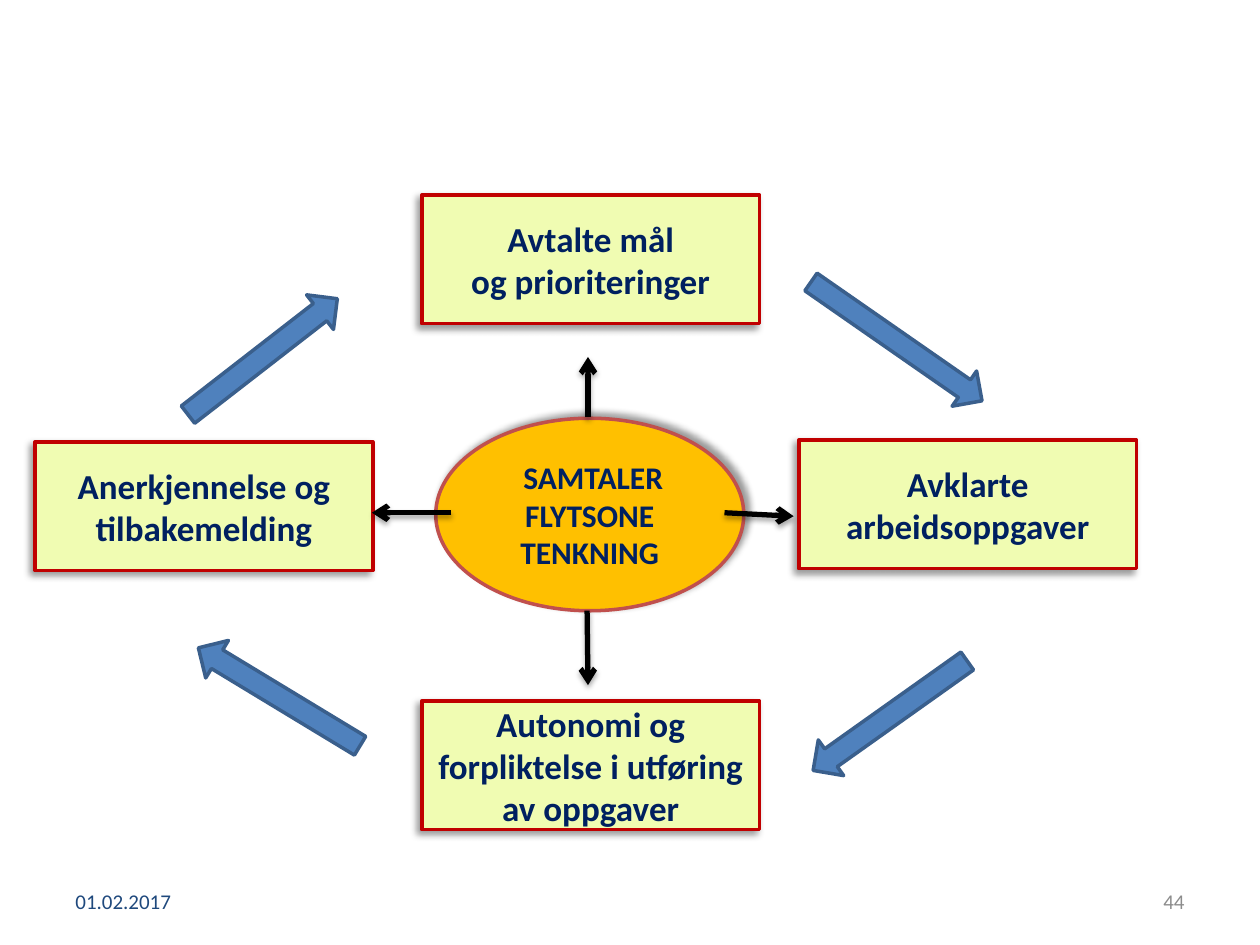
from lxml import etree
from pptx import Presentation
from pptx.dml.color import RGBColor
from pptx.enum import shapes, text
from pptx.oxml.ns import qn
from pptx.util import Pt

NAVY = RGBColor(0x00, 0x20, 0x60)
LIME = RGBColor(0xF0, 0xFC, 0xB2)
RED = RGBColor(0xC0, 0x00, 0x00)
BLUE = RGBColor(0x4F, 0x81, 0xBD)
DARK_BLUE = RGBColor(0x3A, 0x5F, 0x8C)
AMBER = RGBColor(0xFF, 0xC0, 0x00)
BRICK = RGBColor(0xC0, 0x50, 0x4D)
DATE_BLUE = RGBColor(0x1F, 0x49, 0x7D)
GREY = RGBColor(0x8C, 0x8C, 0x8C)
BLACK = RGBColor(0x00, 0x00, 0x00)

LEFT, CENTER, RIGHT = text.PP_ALIGN.LEFT, text.PP_ALIGN.CENTER, text.PP_ALIGN.RIGHT
RECT, OVAL = shapes.MSO_SHAPE.RECTANGLE, shapes.MSO_SHAPE.OVAL
RIGHT_ARROW, DOWN_ARROW = shapes.MSO_SHAPE.RIGHT_ARROW, shapes.MSO_SHAPE.DOWN_ARROW

BOX_W, BOX_H = 193, 73.5
STEPS = [
    (241, 111.5, "Avtalte mål\nog prioriteringer"),
    (20, 252.5, "Anerkjennelse og tilbakemelding"),
    (456.5, 251.5, "Avklarte arbeidsoppgaver"),
    (241, 400.5, "Autonomi og forpliktelse i utføring av oppgaver"),
]
# preset, centre x, centre y, width, height, rotation
CYCLE_ARROWS = [
    (RIGHT_ARROW, 512.3, 195.1, 119, 24.5, 34.8),
    (DOWN_ARROW, 508.7, 409, 25, 108, 54.6),
    (DOWN_ARROW, 159.5, 398.2, 25, 108, 121.2),
    (DOWN_ARROW, 150.1, 203.8, 25, 108, 232.2),
]
# x and y of the start, x and y of the tip
SPOKES = [
    (336, 238.5, 336, 204),
    (414, 293, 453.5, 295),
    (335.5, 349, 336, 391.5),
    (258, 293, 212.5, 293),
]


def add_shadow(sp, blur, dist, angle, opacity):
    """Give a shape or connector, whose line is already set, an outer shadow."""
    sp_pr = sp._element.spPr
    effects = sp_pr.find(qn("a:effectLst"))
    if effects is None:
        effects = etree.SubElement(sp_pr, qn("a:effectLst"))
    shadow = etree.SubElement(
        effects, qn("a:outerShdw"), blurRad=str(int(Pt(blur))),
        dist=str(int(Pt(dist))), dir=str(angle * 60000), rotWithShape="0")
    color = etree.SubElement(shadow, qn("a:srgbClr"), val=str(BLACK))
    etree.SubElement(color, qn("a:alpha"), val=str(opacity * 1000))


def write(sp, content, size, color, align, bold=False):
    tf = sp.text_frame
    tf.word_wrap = True
    tf.vertical_anchor = text.MSO_ANCHOR.MIDDLE
    tf.text = content
    for p in tf.paragraphs:
        p.alignment = align
        for r in p.runs:
            r.font.name = "Calibri"
            r.font.size = Pt(size)
            r.font.bold = bold
            r.font.color.rgb = color


def add_filled(s, preset, x, y, w, h, fill, line):
    sp = s.shapes.add_shape(preset, Pt(x), Pt(y), Pt(w), Pt(h))
    sp.shadow.inherit = False
    sp.fill.solid()
    sp.fill.fore_color.rgb = fill
    sp.line.color.rgb = line
    sp.line.width = Pt(2)
    return sp


def add_footer(s, x, y, w, h, content, color, align):
    sp = s.shapes.add_textbox(Pt(x), Pt(y), Pt(w), Pt(h))
    write(sp, content, 12, color, align)


def add_step(s, x, y, w, h, content):
    sp = add_filled(s, RECT, x, y, w, h, LIME, RED)
    add_shadow(sp, 4, 3, 135, 40)
    write(sp, content, 20, NAVY, CENTER, bold=True)


def add_cycle_arrow(s, preset, cx, cy, w, h, rotation):
    sp = add_filled(s, preset, cx - w / 2, cy - h / 2, w, h, BLUE, DARK_BLUE)
    sp.rotation = rotation


def add_core(s, x, y, w, h):
    sp = add_filled(s, OVAL, x, y, w, h, AMBER, BRICK)
    add_shadow(sp, 4, 3, 315, 40)
    write(sp, " SAMTALER\nFLYTSONE TENKNING", 18, NAVY, CENTER, bold=True)


def add_spoke(s, *ends):
    sp = s.shapes.add_connector(
        shapes.MSO_CONNECTOR.STRAIGHT, *(Pt(v) for v in ends))
    sp.line.color.rgb = BLACK
    sp.line.width = Pt(3)
    etree.SubElement(sp.line._get_or_add_ln(), qn("a:tailEnd"), type="arrow")
    add_shadow(sp, 3.1, 1.8, 90, 35)


def main():
    prs = Presentation()
    prs.slide_width, prs.slide_height = Pt(720), Pt(540)
    s = prs.slides.add_slide(prs.slide_layouts[6])
    add_footer(s, 36, 500.5, 168, 28.75, "01.02.2017", DATE_BLUE, LEFT)
    add_footer(s, 516, 500.5, 168, 28.75, "44", GREY, RIGHT)
    for x, y, content in STEPS:
        add_step(s, x, y, BOX_W, BOX_H, content)
    for arrow in CYCLE_ARROWS:
        add_cycle_arrow(s, *arrow)
    add_core(s, 249, 239, 176, 110)
    for spoke in SPOKES:
        add_spoke(s, *spoke)
    prs.save("out.pptx")


if __name__ == "__main__":
    main()
